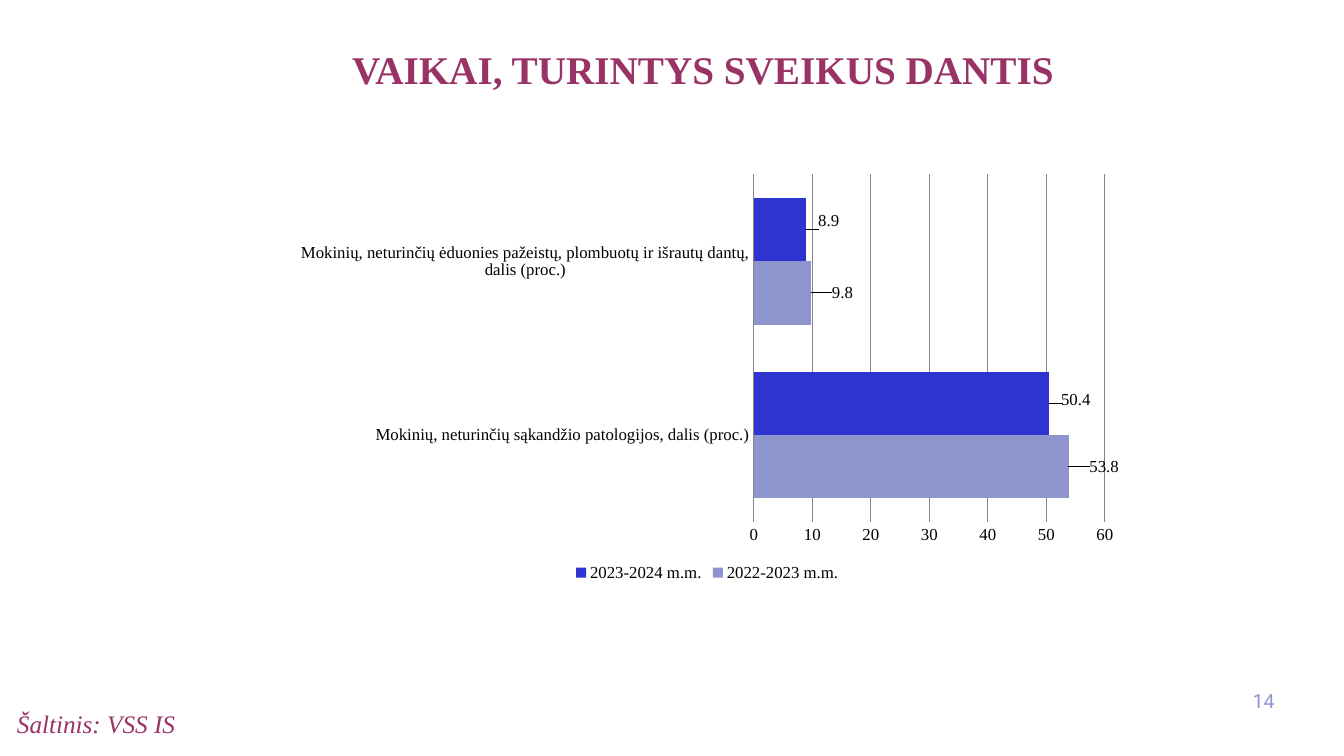
from lxml import etree
from pptx import Presentation
from pptx.chart.data import CategoryChartData
from pptx.dml.color import RGBColor
from pptx.enum.chart import XL_CHART_TYPE, XL_LABEL_POSITION, XL_LEGEND_POSITION, XL_TICK_MARK
from pptx.enum.text import MSO_ANCHOR, PP_ALIGN
from pptx.oxml.ns import qn
from pptx.util import Inches, Pt

BAR_CLUSTERED = XL_CHART_TYPE.BAR_CLUSTERED
OUTSIDE_END = XL_LABEL_POSITION.OUTSIDE_END
BOTTOM = XL_LEGEND_POSITION.BOTTOM
NO_TICK = XL_TICK_MARK.NONE
TOP = MSO_ANCHOR.TOP
LEFT, CENTER, RIGHT = PP_ALIGN.LEFT, PP_ALIGN.CENTER, PP_ALIGN.RIGHT

PLUM = RGBColor(0x99, 0x33, 0x66)
LAVENDER = RGBColor(0x8E, 0x96, 0xCD)
PALE_BLUE = RGBColor(0x8D, 0x95, 0xCC)
BLUE = RGBColor(0x2E, 0x34, 0xD0)
GRAY = RGBColor(0x86, 0x86, 0x86)
BLACK = RGBColor(0, 0, 0)
SERIF = "Times New Roman"

CATEGORIES = [
    "Mokinių, neturinčių sąkandžio patologijos, dalis (proc.)",
    "Mokinių, neturinčių ėduonies pažeistų, plombuotų ir išrautų dantų, dalis (proc.)",
]
SERIES = [
    ("2022-2023 m.m.", (53.8, 9.8), PALE_BLUE, ((0.02, 0), (0.02, 0))),
    ("2023-2024 m.m.", (50.4, 8.9), BLUE, ((0.01, -0.01), (0.01, -0.02))),
]


def style_font(font, size, color, name=SERIF):
    """Set the size, colour and typeface of a font."""
    font.size = Pt(size)
    font.name = name
    font.color.rgb = color


def add_text(slide, box, text, size, color, name=SERIF, align=LEFT, bold=False, italic=False):
    """Add a one-paragraph text box."""
    tf = slide.shapes.add_textbox(*map(Inches, box)).text_frame
    tf.word_wrap = True
    tf.vertical_anchor = TOP
    p = tf.paragraphs[0]
    p.text = text
    p.alignment = align
    font = p.runs[0].font
    style_font(font, size, color, name)
    font.bold = bold
    font.italic = italic
    return p


def make_layout(**values):
    """Build a manual chart layout element."""
    layout = etree.Element(qn("c:layout"))
    manual = etree.SubElement(layout, qn("c:manualLayout"))
    for tag, value in values.items():
        etree.SubElement(manual, qn(f"c:{tag}")).set("val", str(value))
    return layout


def style_series(series, color, shifts):
    """Fill a series and place its value labels."""
    series.format.fill.solid()
    series.format.fill.fore_color.rgb = color
    labels = series.data_labels
    labels.show_value = True
    labels.position = OUTSIDE_END
    style_font(labels.font, 12, BLACK)
    for i, (x, y) in enumerate(shifts):
        label = series.points[i].data_label
        label.position = OUTSIDE_END
        style_font(label.font, 12, BLACK)
    for label, (x, y) in zip(labels._element.findall(qn("c:dLbl")), shifts):
        label.find(qn("c:idx")).addnext(make_layout(x=x, y=y))


def style_axes(chart):
    """Set the scale, gridlines and axis lines."""
    value_axis, category_axis = chart.value_axis, chart.category_axis
    value_axis.minimum_scale = 0
    value_axis.maximum_scale = 60
    value_axis.major_unit = 10
    value_axis.has_major_gridlines = True
    value_axis.format.line.fill.background()
    for line in (value_axis.major_gridlines.format.line, category_axis.format.line):
        line.color.rgb = GRAY
        line.width = Pt(0.75)
    for axis in (value_axis, category_axis):
        axis.major_tick_mark = NO_TICK
        axis.minor_tick_mark = NO_TICK


def add_bar_chart(slide, box):
    """Add the clustered bar chart of healthy teeth."""
    data = CategoryChartData()
    data.categories = CATEGORIES
    for name, values, _, _ in SERIES:
        data.add_series(name, values)
    chart = slide.shapes.add_chart(BAR_CLUSTERED, *map(Inches, box), data).chart
    style_font(chart.font, 12, BLACK)
    chart.has_title = False
    chart.has_legend = True
    chart.legend.position = BOTTOM
    chart.legend.include_in_layout = False
    plot = chart.plots[0]
    plot.gap_width = 75
    plot.overlap = 0
    plot.vary_by_categories = False
    for series, (_, _, color, shifts) in zip(plot.series, SERIES):
        style_series(series, color, shifts)
    style_axes(chart)
    area = chart._chartSpace.find(".//" + qn("c:plotArea"))
    for old in area.findall(qn("c:layout")):
        area.remove(old)
    area.insert(0, make_layout(layoutTarget="inner", xMode="edge", yMode="edge",
                               x=0.555, y=0.019, w=0.415, h=0.83))


def main():
    """Build the slide and save it."""
    prs = Presentation()
    prs.slide_width, prs.slide_height = Inches(13.33), Inches(7.5)
    slide = prs.slides.add_slide(prs.slide_layouts[6])
    title = add_text(slide, (0.26, 0.45, 13.42, 1.19), "VAIKAI, TURINTYS SVEIKUS DANTIS",
                     28, PLUM, align=CENTER, bold=True)
    title.line_spacing = 0.9
    add_bar_chart(slide, (2.82, 1.65, 8.39, 4.16))
    add_text(slide, (0.07, 6.98, 6.3, 0.38), "Šaltinis: VSS IS", 18, PLUM, italic=True)
    add_text(slide, (12.22, 6.79, 0.52, 0.4), "14", 14, LAVENDER, "Roboto", RIGHT)
    prs.save("out.pptx")


if __name__ == "__main__":
    main()
